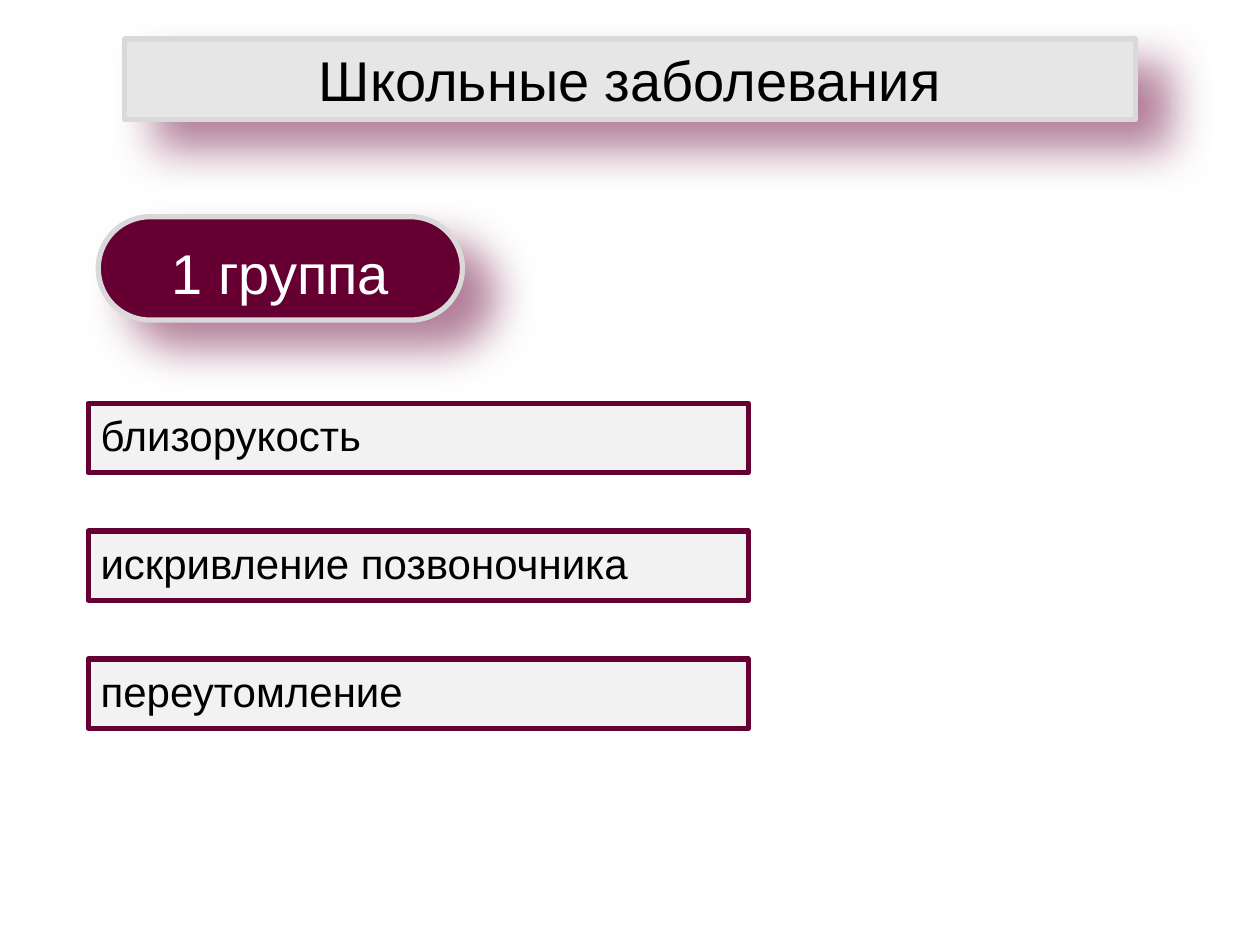
from dataclasses import dataclass
from lxml import etree
from pptx import Presentation
from pptx.dml.color import RGBColor
from pptx.enum import shapes, text
from pptx.oxml import ns
from pptx.util import Inches, Pt


@dataclass(frozen=True)
class Theme:
    font: str = "Arial"
    wine: str = "660033"
    edge: str = "D9D9D9"
    head: str = "E6E6E6"
    pale: str = "F2F2F2"
    ink: str = "000000"
    white: str = "FFFFFF"
    big: int = 32
    body: int = 24
    line: int = 3


THEME = Theme()


def paint(shape, fill, edge):
    shape.fill.solid()
    shape.fill.fore_color.rgb = RGBColor.from_string(fill)
    shape.line.color.rgb = RGBColor.from_string(edge)
    shape.line.width = Pt(THEME.line)


def write(shape, words, size, color, align):
    frame = shape.text_frame
    frame.text = words
    frame.word_wrap = True
    frame.vertical_anchor = text.MSO_ANCHOR.TOP
    frame.auto_size = text.MSO_AUTO_SIZE.NONE
    para = frame.paragraphs[0]
    para.alignment = align
    para.font.name = THEME.font
    para.font.size = Pt(size)
    para.font.color.rgb = RGBColor.from_string(color)


def shade(shape):
    props = shape.fill._xPr
    for old in props.findall(ns.qn("a:effectLst")):
        props.remove(old)
    effects = etree.SubElement(props, ns.qn("a:effectLst"))
    outer = etree.SubElement(
        effects, ns.qn("a:outerShdw"), blurRad=str(Pt(25)), dist=str(Pt(23)),
        dir=str(40 * 60000), algn="ctr", rotWithShape="0")
    color = etree.SubElement(outer, ns.qn("a:srgbClr"), val=THEME.wine)
    etree.SubElement(color, ns.qn("a:alpha"), val="50000")


def add_title(slide, box, words):
    title = slide.shapes.title
    title.left, title.top, title.width, title.height = map(Inches, box)
    paint(title, THEME.head, THEME.edge)
    shade(title)
    write(title, words, THEME.big, THEME.ink, text.PP_ALIGN.CENTER)


def add_badge(slide, box, words):
    badge = slide.shapes.add_shape(
        shapes.MSO_SHAPE.ROUNDED_RECTANGLE, *map(Inches, box))
    badge.adjustments[0] = 0.5
    paint(badge, THEME.wine, THEME.edge)
    shade(badge)
    write(badge, words, THEME.big, THEME.white, text.PP_ALIGN.CENTER)


def add_items(slide, box, items, high):
    left, top, width, height = box
    step = (height - high) / (len(items) - 1)
    group = slide.shapes.add_group_shape()
    for row, words in enumerate(items):
        item = group.shapes.add_shape(
            shapes.MSO_SHAPE.RECTANGLE,
            *map(Inches, (left, top + row * step, width, high)))
        item.shadow.inherit = False
        paint(item, THEME.pale, THEME.wine)
        write(item, words, THEME.body, THEME.ink, text.PP_ALIGN.LEFT)


def main():
    deck = Presentation()
    deck.slide_width, deck.slide_height = Inches(10), Inches(7.5)
    slide = deck.slides.add_slide(deck.slide_layouts[5])
    add_title(slide, (0.99, 0.31, 8.02, 0.64), "Школьные заболевания")
    add_badge(slide, (0.78, 1.72, 2.89, 0.82), "1 группа")
    add_items(slide, (0.7, 3.2, 5.24, 2.58),
              ["близорукость", "искривление позвоночника", "переутомление"],
              0.55)
    deck.save("out.pptx")


if __name__ == "__main__":
    main()
